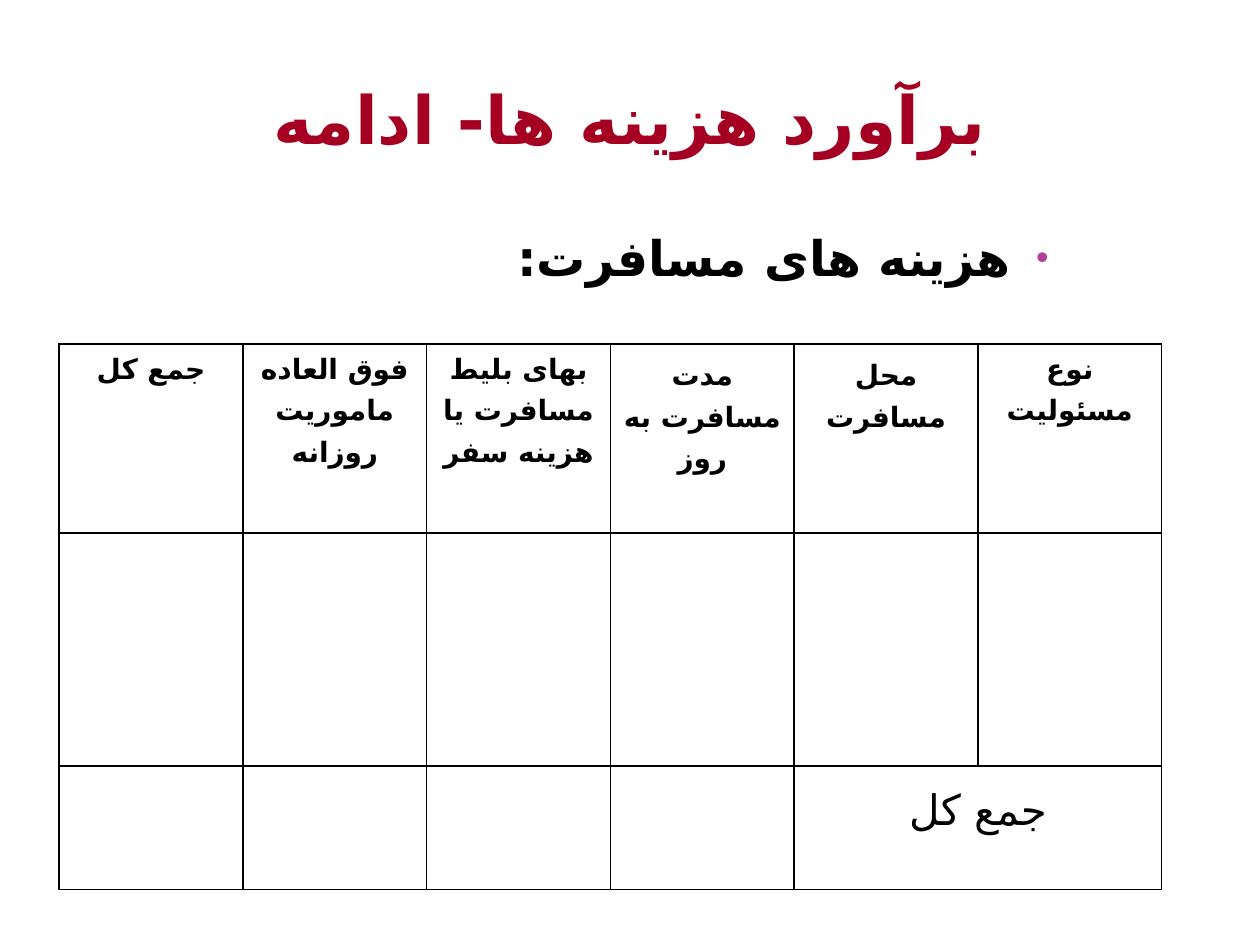
import dataclasses

import lxml.etree
import pptx
import pptx.dml.color
import pptx.enum.text
import pptx.oxml.ns
import pptx.util

Inches = pptx.util.Inches
Pt = pptx.util.Pt
qn = pptx.oxml.ns.qn
ALIGN = pptx.enum.text.PP_ALIGN
ANCHOR = pptx.enum.text.MSO_ANCHOR


@dataclasses.dataclass(frozen=True)
class Theme:
    """Colours, fonts and type sizes of the slide."""
    title: str = "A50021"
    outline: str = "5E1A50"
    bullet: str = "B13F9A"
    ink: str = "000000"
    paper: str = "FFFFFF"
    font: str = "Cabin"
    header_font: str = "Times New Roman"
    script_font: str = "DejaVu Sans"
    title_size: int = 38
    body_size: int = 28
    header_size: int = 16
    total_size: int = 24
    table_spacing: float = 1.29


THEME = Theme()
HEADERS = ["جمع کل", "فوق العاده ماموریت روزانه", "بهای بلیط مسافرت یا هزینه سفر",
           "مدت مسافرت به روز", "محل مسافرت", "نوع مسئولیت"]
ROW_HEIGHTS = [1.5, 1.85, 0.98]
TIGHT_COLUMNS = {0, 1, 2, 5}


def rgb(value):
    """Return a colour object for a hex string."""
    return pptx.dml.color.RGBColor.from_string(value)


def add_child(parent, tag, **attributes):
    """Append a DrawingML element to its parent."""
    return lxml.etree.SubElement(parent, qn(tag), attributes)


def add_line(parent, tag, color, width, index):
    """Insert a solid line element at a given place in its parent."""
    line = add_child(parent, tag, w=str(int(width)))
    add_child(add_child(line, "a:solidFill"), "a:srgbClr", val=color)
    parent.insert(index, line)


def write_text(frame, text, *, size, color=THEME.ink, font=THEME.font, bold=True,
               align=ALIGN.CENTER, spacing=None):
    """Write one right-to-left paragraph and return its span."""
    para = frame.paragraphs[0]
    para.alignment = align
    para.line_spacing = spacing
    para._p.get_or_add_pPr().set("rtl", "1")
    span = para.add_run()
    span.text = text
    span.font.size = Pt(size)
    span.font.bold = bold
    span.font.color.rgb = rgb(color)
    span.font.name = font
    properties = span._r.get_or_add_rPr()
    properties.set("lang", "fa-IR")
    add_child(properties, "a:cs", typeface=THEME.script_font)
    return span


def set_margins(target, side, top):
    """Set equal side margins and equal top and bottom margins."""
    target.margin_left = target.margin_right = Inches(side)
    target.margin_top = target.margin_bottom = Inches(top)


def place_title(page, left, top, width, height):
    """Move and format the title placeholder."""
    title = page.shapes.title
    title.left, title.top, title.width, title.height = map(Inches, (left, top, width, height))
    frame = title.text_frame
    frame.vertical_anchor = ANCHOR.BOTTOM
    set_margins(frame, 0.05, 0)
    span = write_text(frame, "برآورد هزینه ها- ادامه", size=THEME.title_size, color=THEME.title)
    add_line(span._r.get_or_add_rPr(), "a:ln", THEME.outline, Pt(0.04), 0)


def place_body(page, left, top, width, height):
    """Add the bulleted lead-in text."""
    box = page.shapes.add_textbox(*map(Inches, (left, top, width, height)))
    frame = box.text_frame
    frame.word_wrap = True
    properties = frame.paragraphs[0]._p.get_or_add_pPr()
    properties.set("marL", str(Inches(0.3)))
    properties.set("indent", str(Inches(-0.3)))
    add_child(add_child(properties, "a:buClr"), "a:srgbClr", val=THEME.bullet)
    add_child(properties, "a:buSzPct", val="73000")
    add_child(properties, "a:buFont", typeface="Arial")
    add_child(properties, "a:buChar", char="•")
    write_text(frame, "هزینه های مسافرت:", size=THEME.body_size, align=ALIGN.RIGHT)


def style_cell(cell):
    """Give a cell a plain fill and thin borders."""
    cell.fill.solid()
    cell.fill.fore_color.rgb = rgb(THEME.paper)
    properties = cell._tc.get_or_add_tcPr()
    for index, tag in enumerate(("a:lnL", "a:lnR", "a:lnT", "a:lnB")):
        add_line(properties, tag, THEME.ink, Pt(1), index)


def place_table(page, left, top, width):
    """Add the travel cost table."""
    frame = page.shapes.add_table(len(ROW_HEIGHTS), len(HEADERS), Inches(left), Inches(top),
                                  Inches(width), Inches(sum(ROW_HEIGHTS)))
    table = frame.table
    table.first_row = table.horz_banding = False
    for row, height in zip(table.rows, ROW_HEIGHTS):
        row.height = Inches(height)
    for cell in table.iter_cells():
        style_cell(cell)
    for column, text in enumerate(HEADERS):
        cell = table.cell(0, column)
        if column in TIGHT_COLUMNS:
            set_margins(cell, 0.07, 0)
        write_text(cell.text_frame, text, size=THEME.header_size, font=THEME.header_font,
                   spacing=THEME.table_spacing)
    total = table.cell(2, 4)
    total.merge(table.cell(2, 5))
    write_text(total.text_frame, "جمع كل", size=THEME.total_size, bold=False,
               spacing=THEME.table_spacing)


def main():
    """Build and save the deck."""
    deck = pptx.Presentation()
    deck.slide_width, deck.slide_height = Inches(10), Inches(7.5)
    page = deck.slides.add_slide(deck.slide_layouts[5])
    page.background.fill.solid()
    page.background.fill.fore_color.rgb = rgb(THEME.paper)
    place_title(page, 0.5, 0.3, 9, 0.95)
    place_body(page, 0.5, 1.76, 7.92, 5.3)
    place_table(page, 0.47, 2.73, 8.75)
    deck.save("out.pptx")


if __name__ == "__main__":
    main()
